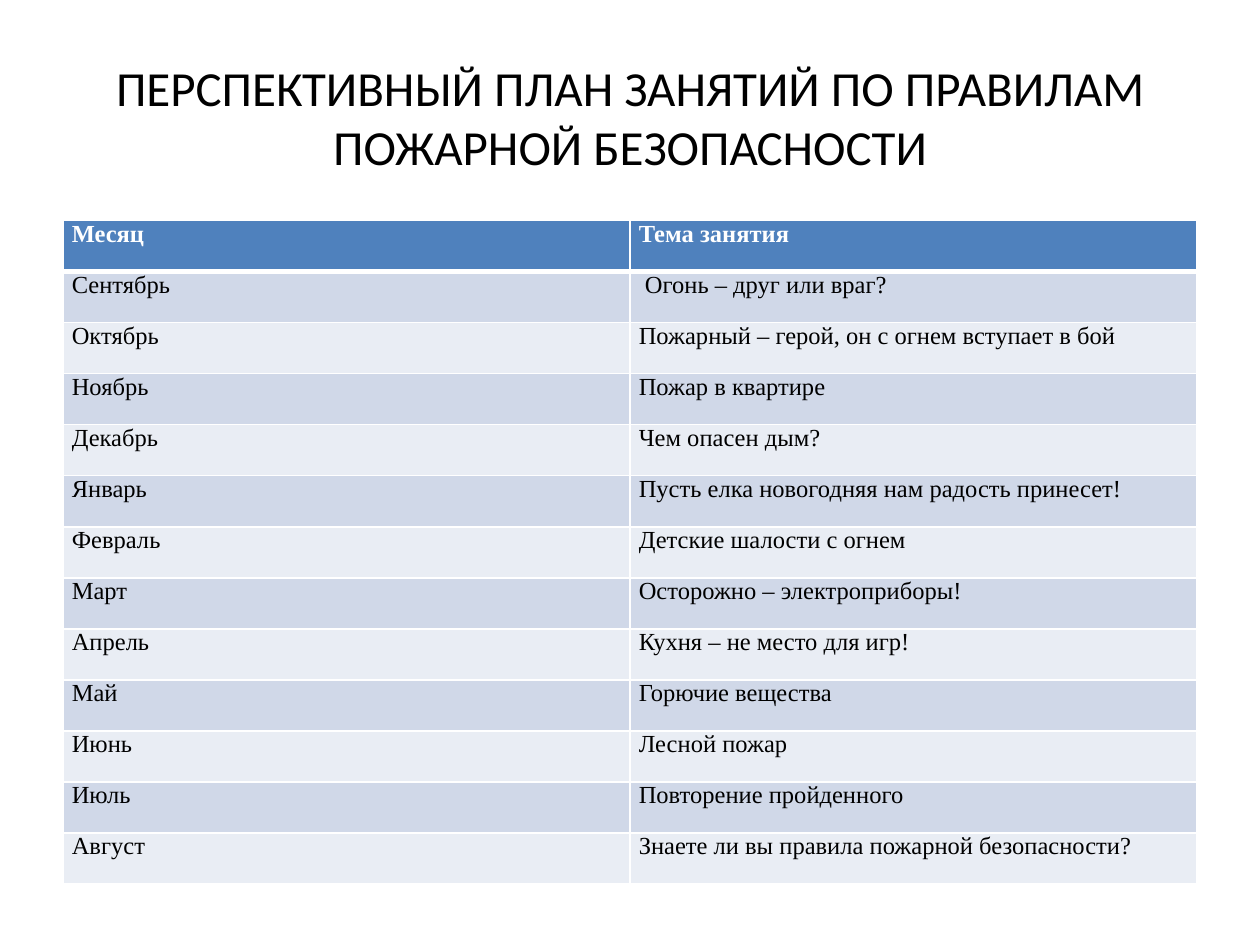
from lxml import etree
from pptx import Presentation, util as u
from pptx.dml.color import RGBColor
from pptx.enum import text
from pptx.oxml import ns

WHITE, BLACK, HEADER = "FFFFFF", "000000", "4F81BD"
BANDS = ["E9EDF4", "D0D8E8"]


def color(hex_value):
    return RGBColor.from_string(hex_value)


def add_border(cell, side, points):
    line = etree.SubElement(cell._tc.get_or_add_tcPr(), ns.qn(f"a:ln{side}"),
                            w=str(u.Pt(points)))
    fill = etree.SubElement(line, ns.qn("a:solidFill"))
    etree.SubElement(fill, ns.qn("a:srgbClr"), val=WHITE)


prs = Presentation()
prs.slide_width, prs.slide_height = u.Inches(10), u.Inches(7.5)
slide = prs.slides.add_slide(prs.slide_layouts[6])

# Title
title = slide.shapes.add_textbox(u.Inches(0.5), u.Inches(0.3), u.Inches(9), u.Inches(1.25))
title_frame = title.text_frame
title_frame.word_wrap = True
title_frame.vertical_anchor = text.MSO_ANCHOR.MIDDLE
heading = title_frame.paragraphs[0]
heading.text = "ПЕРСПЕКТИВНЫЙ ПЛАН ЗАНЯТИЙ ПО ПРАВИЛАМ ПОЖАРНОЙ БЕЗОПАСНОСТИ"
heading.alignment = text.PP_ALIGN.CENTER
for name, value in {"name": "Calibri", "size": u.Pt(28)}.items():
    setattr(heading.font, name, value)
heading.font.color.rgb = color(BLACK)

# Lesson plan: header, then one row per month
plan = [
    ("Месяц", "Тема занятия"),
    ("Сентябрь", " Огонь – друг или враг?"),
    ("Октябрь", "Пожарный – герой, он с огнем вступает в бой"),
    ("Ноябрь", "Пожар в квартире"),
    ("Декабрь", "Чем опасен дым?"),
    ("Январь", "Пусть елка новогодняя нам радость принесет!"),
    ("Февраль", "Детские шалости с огнем"),
    ("Март", "Осторожно – электроприборы!"),
    ("Апрель", "Кухня – не место для игр!"),
    ("Май", "Горючие вещества"),
    ("Июнь", "Лесной пожар"),
    ("Июль", "Повторение пройденного"),
    ("Август", "Знаете ли вы правила пожарной безопасности?"),
]
schedule = slide.shapes.add_table(len(plan), 2, u.Inches(0.5), u.Inches(1.75),
                                  u.Inches(9), u.Inches(5.27)).table
margins = {"margin_left": u.Inches(0.07), "margin_right": u.Inches(0.07),
           "margin_top": 0, "margin_bottom": 0}

for row, lesson in enumerate(plan):
    is_header = row == 0
    font_format = {"name": "Times New Roman", "size": u.Pt(14), "bold": is_header}
    for column, wording in enumerate(lesson):
        cell = schedule.cell(row, column)
        cell.text = wording
        for name, value in margins.items():
            setattr(cell, name, value)
        font = cell.text_frame.paragraphs[0].runs[0].font
        for name, value in font_format.items():
            setattr(font, name, value)
        font.color.rgb = color(WHITE if is_header else BLACK)

        # The rule under the header is thicker
        for side in "LRTB":
            thick = (side == "B" and row == 0) or (side == "T" and row == 1)
            add_border(cell, side, 3 if thick else 1)
        cell.fill.solid()
        cell.fill.fore_color.rgb = color(HEADER if is_header else BANDS[row % 2])

prs.save("out.pptx")
